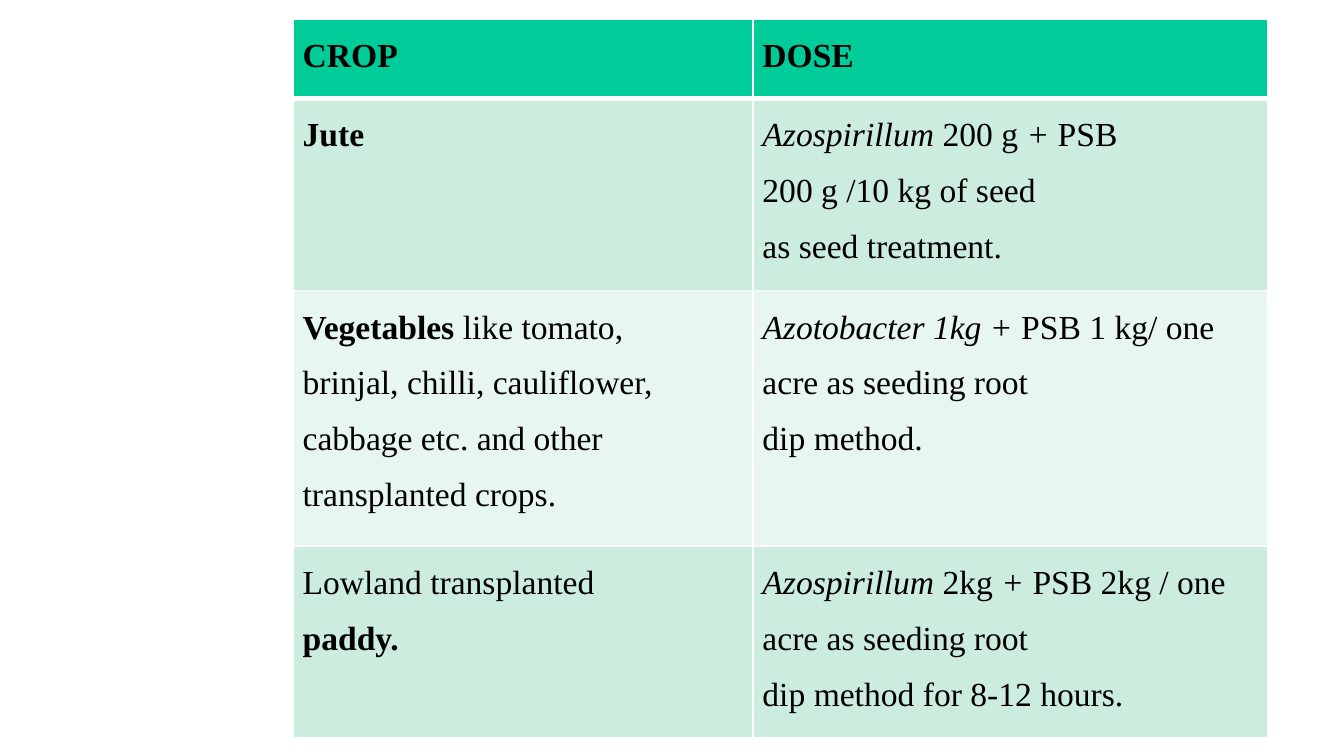
"""Build a slide with a table of biofertiliser doses by crop."""
from lxml.etree import SubElement
from pptx import Presentation
from pptx.dml.color import RGBColor as Color
from pptx.oxml.ns import qn
from pptx.util import Cm, Pt

COLORS = {"header": "00CC99", "odd": "CCECDE", "even": "E7F6EF", "border": "FFFFFF", "text": "000000"}
FORMAT = {"name": "Times New Roman", "size": Pt(18)}
MARGINS = {"margin_left": Cm(0.18), "margin_right": Cm(0.18), "margin_top": 0, "margin_bottom": 0}
STYLES = {
    "plain": {"bold": False, "italic": False},
    "bold": {"bold": True, "italic": False},
    "italic": {"bold": False, "italic": True},
}
COLUMN_WIDTHS = [8.69, 9.73]
ROW_HEIGHTS = [1.5, 3.63, 4.83, 3.63]
ROWS = [
    [[[("CROP", "bold")]], [[("DOSE", "bold")]]],
    [
        [[("Jute", "bold")]],
        [
            [("Azospirillum ", "italic"), ("200 g ", "plain"), ("+ ", "italic"), ("PSB", "plain")],
            [("200 g /10 kg of seed", "plain")],
            [("as seed treatment.", "plain")],
        ],
    ],
    [
        [
            [("Vegetables ", "bold"), ("like tomato,", "plain")],
            [("brinjal, chilli, cauliflower,", "plain")],
            [("cabbage etc. and other", "plain")],
            [("transplanted crops.", "plain")],
        ],
        [
            [("Azotobacter 1kg + ", "italic"), ("PSB 1 kg/ one acre as seeding root", "plain")],
            [("dip method.", "plain")],
        ],
    ],
    [
        [[("Lowland transplanted", "plain")], [("paddy.", "bold")]],
        [
            [("Azospirillum ", "italic"), ("2kg", "plain"), (" + ", "italic"),
             ("PSB 2kg / one acre as seeding root", "plain")],
            [("dip method for 8-12 hours.", "plain")],
        ],
    ],
]


def add_borders(cell, bottom_width):
    properties = cell._tc.get_or_add_tcPr()
    for side, width in {"lnL": 1, "lnR": 1, "lnT": 1, "lnB": bottom_width}.items():
        line = SubElement(properties, qn(f"a:{side}"), w=str(Pt(width)))
        fill = SubElement(line, qn("a:solidFill"))
        SubElement(fill, qn("a:srgbClr"), val=COLORS["border"])


def fill_cell(cell, paragraphs):
    for index, spans in enumerate(paragraphs):
        frame = cell.text_frame
        para = frame.add_paragraph() if index else frame.paragraphs[0]
        para.line_spacing = 1.5
        for text, style in spans:
            span = para.add_run()
            span.text = text
            span.font.color.rgb = Color.from_string(COLORS["text"])
            for name, value in {**FORMAT, **STYLES[style]}.items():
                setattr(span.font, name, value)


deck = Presentation()
deck.slide_width, deck.slide_height = Cm(25.4), Cm(14.29)
page = deck.slides.add_slide(deck.slide_layouts[6])

dose_table = page.shapes.add_table(
    len(ROWS), len(COLUMN_WIDTHS), Cm(5.54), Cm(0.36), Cm(sum(COLUMN_WIDTHS)), Cm(sum(ROW_HEIGHTS))
).table
for column, width in zip(dose_table.columns, COLUMN_WIDTHS):
    column.width = Cm(width)

for number, (row, height, contents) in enumerate(zip(dose_table.rows, ROW_HEIGHTS, ROWS)):
    row.height = Cm(height)
    band = "header" if number == 0 else "odd" if number % 2 else "even"
    for cell, paragraphs in zip(row.cells, contents):
        for name, value in MARGINS.items():
            setattr(cell, name, value)
        add_borders(cell, 3 if band == "header" else 1)
        cell.fill.solid()
        cell.fill.fore_color.rgb = Color.from_string(COLORS[band])
        fill_cell(cell, paragraphs)

deck.save("out.pptx")
